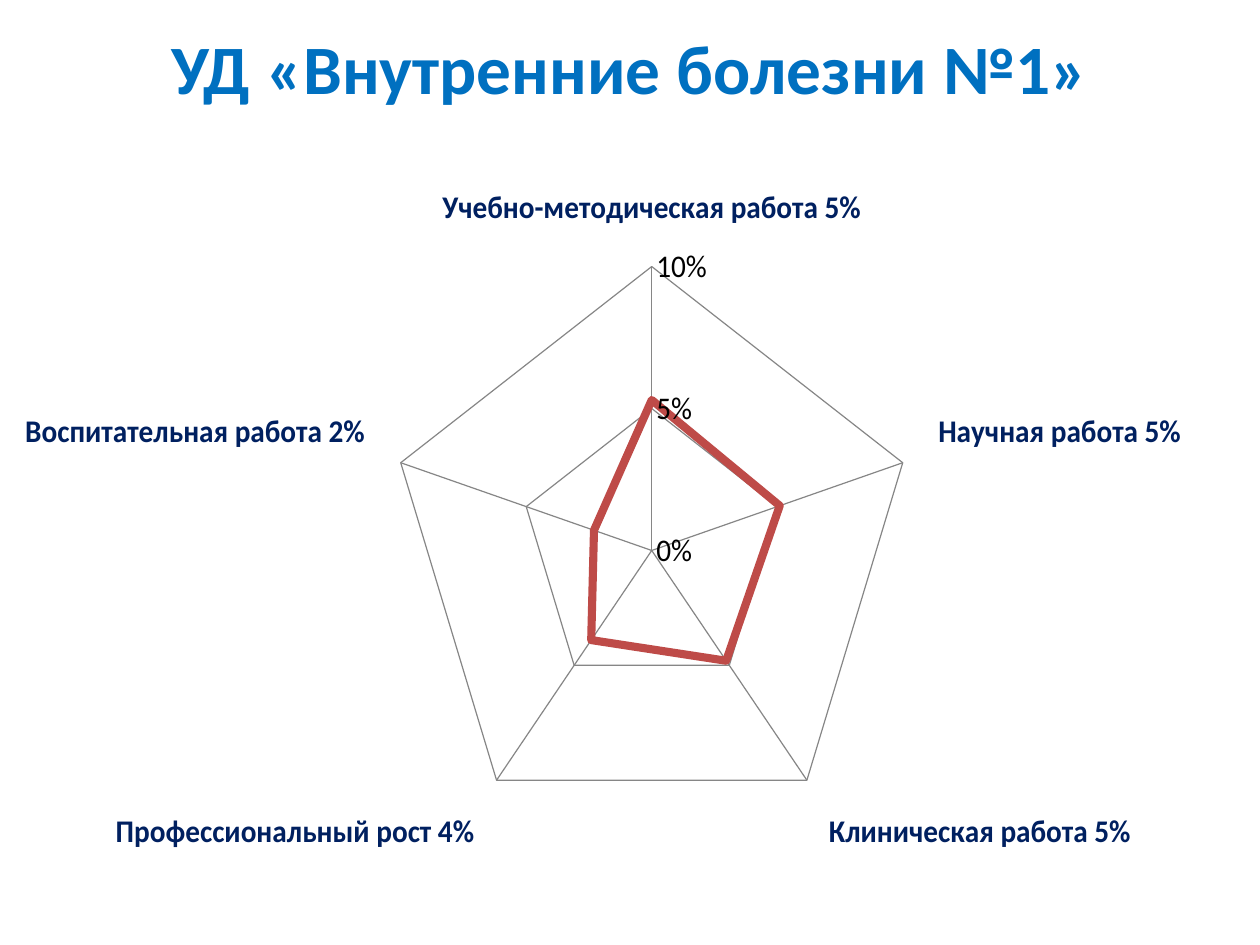
from lxml import etree
from pptx import Presentation
from pptx.chart.data import CategoryChartData
from pptx.dml.color import RGBColor
from pptx.enum.chart import XL_CHART_TYPE, XL_TICK_MARK
from pptx.enum.text import MSO_ANCHOR, PP_ALIGN
from pptx.oxml.ns import qn
from pptx.util import Inches, Pt

RADAR = XL_CHART_TYPE.RADAR
NO_TICK = XL_TICK_MARK.NONE
MIDDLE = MSO_ANCHOR.MIDDLE
CENTER = PP_ALIGN.CENTER

TITLE_BLUE = "0070C0"
NAVY = "002060"
BLACK = "000000"
GRAY = "868686"
RED = "BE4B48"

WORK_SHARES = {
    "Учебно-методическая работа 5%": 0.053,
    "Научная работа 5%": 0.051,
    "Клиническая работа 5%": 0.048,
    "Профессиональный рост 4%": 0.039,
    "Воспитательная работа 2%": 0.023,
}


def color(value):
    return RGBColor.from_string(value)


def format_font(font, size=18, fill=BLACK, bold=False, name="Calibri"):
    font.name = name
    font.size = Pt(size)
    font.bold = bold
    font.color.rgb = color(fill)


def write(para, text, **style):
    span = para.add_run()
    span.text = text
    format_font(span.font, **style)


def draw_line(line, fill, width):
    line.color.rgb = color(fill)
    line.width = Pt(width)


class SlideBuilder:
    def __init__(self, page):
        self.page = page

    def text(self, left, top, width, height, text, **style):
        box = self.page.shapes.add_textbox(
            Inches(left), Inches(top), Inches(width), Inches(height))
        frame = box.text_frame
        frame.word_wrap = True
        frame.vertical_anchor = MIDDLE
        para = frame.paragraphs[0]
        para.alignment = CENTER
        write(para, text, **style)

    def radar(self, left, top, width, height, shares, plot):
        data = CategoryChartData(number_format="0%")
        data.categories = list(shares)
        data.add_series("Series 1", list(shares.values()))
        chart = self.page.shapes.add_chart(
            RADAR, Inches(left), Inches(top), Inches(width), Inches(height),
            data).chart
        chart.has_title = False
        chart.has_legend = False
        format_font(chart.font)
        self.axes(chart)
        self.place_plot(chart, plot)
        series = chart.plots[0].series[0]
        series.smooth = False
        draw_line(series.format.line, RED, 5)

    def axes(self, chart):
        for axis in (chart.category_axis, chart.value_axis):
            axis.has_major_gridlines = True
            axis.major_tick_mark = NO_TICK
            axis.minor_tick_mark = NO_TICK
            draw_line(axis.major_gridlines.format.line, GRAY, 0.75)
            draw_line(axis.format.line, GRAY, 0.75)
        format_font(chart.category_axis.tick_labels.font, fill=NAVY, bold=True)
        scale = chart.value_axis
        scale.minimum_scale = 0
        scale.maximum_scale = 0.1
        scale.major_unit = 0.05
        scale.tick_labels.number_format = "0%"
        scale.tick_labels.number_format_is_linked = False
        format_font(scale.tick_labels.font)

    def place_plot(self, chart, plot):
        area = chart.plots[0]._element.getparent()
        for old in area.findall(qn("c:layout")):
            area.remove(old)
        layout = etree.Element(qn("c:layout"))
        area.insert(0, layout)
        manual = etree.SubElement(layout, qn("c:manualLayout"))
        settings = [("layoutTarget", "inner"), ("xMode", "edge"),
                    ("yMode", "edge"), *zip("xywh", plot)]
        for tag, value in settings:
            etree.SubElement(manual, qn(f"c:{tag}"), val=str(value))


def main():
    deck = Presentation()
    deck.slide_width, deck.slide_height = Inches(10), Inches(7.5)
    page = deck.slides.add_slide(deck.slide_layouts[6])
    builder = SlideBuilder(page)
    builder.text(0.5, 0.3, 9, 0.46, "УД «Внутренние болезни №1»",
                 size=39.6, fill=TITLE_BLUE, bold=True)
    builder.radar(0.2, 0.84, 9.8, 6.66, WORK_SHARES,
                  plot=(0.24, 0.17, 0.46, 0.72))
    deck.save("out.pptx")


if __name__ == "__main__":
    main()
